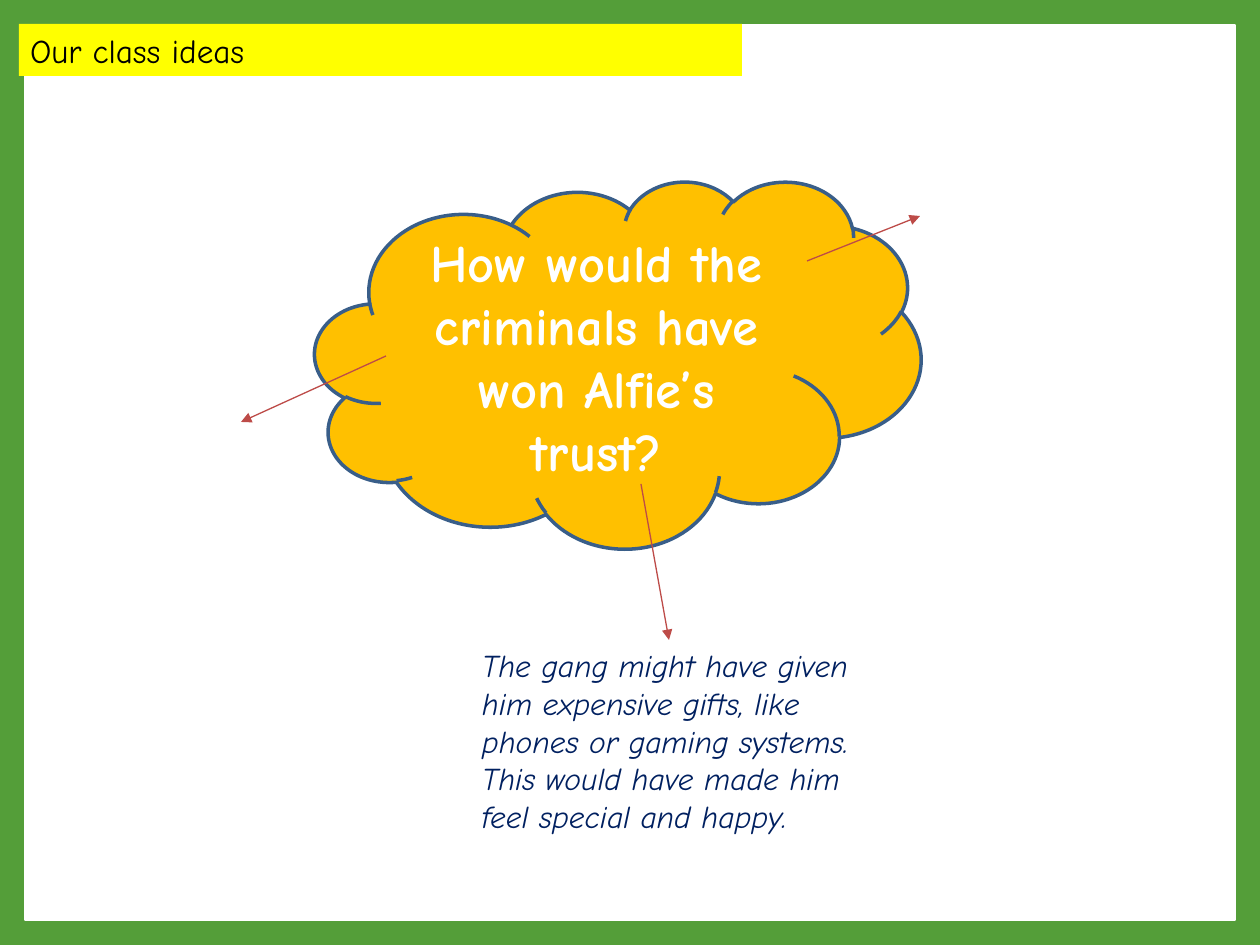
from pptx import Presentation, util as u
from pptx.dml.color import RGBColor
from pptx.enum import shapes, text
from pptx.oxml.ns import qn
from lxml import etree

PX = 914400 / 126
FONT = "Comic Neue"


def px(n):
    """Turn pixels into EMU."""
    return u.Emu(round(n * PX))


def rgb(h):
    """Turn a hex string into a colour."""
    return RGBColor.from_string(h)


def write(sp, words, color, align=text.PP_ALIGN.LEFT, anchor=text.MSO_ANCHOR.TOP, **fmt):
    """Put one formatted paragraph in a shape."""
    tf = sp.text_frame
    frame = dict(word_wrap=True, vertical_anchor=anchor, margin_left=px(11),
                 margin_right=px(11), margin_top=px(6), margin_bottom=px(6))
    for key, value in frame.items():
        setattr(tf, key, value)
    p = tf.paragraphs[0]
    p.alignment = align
    r = p.add_run()
    r.text = words
    for key, value in dict(name=FONT, **fmt).items():
        setattr(r.font, key, value)
    r.font.color.rgb = rgb(color)


def block(s, kind, box, fill, line=None, width=1):
    """Draw a filled preset shape in a box."""
    sp = s.shapes.add_shape(kind, *map(px, box))
    sp.shadow.inherit = False
    sp.fill.solid()
    sp.fill.fore_color.rgb = rgb(fill)
    if line:
        sp.line.color.rgb = rgb(line)
        sp.line.width = u.Pt(width)
    else:
        sp.line.fill.background()
    return sp


def arrow(s, x, y, start, end):
    """Draw a thin arrow between two points measured from x, y."""
    points = x + start[0], y + start[1], x + end[0], y + end[1]
    c = s.shapes.add_connector(shapes.MSO_CONNECTOR.STRAIGHT, *map(px, points))
    c.line.color.rgb = rgb("BD4B48")
    c.line.width = u.Pt(0.75)
    etree.SubElement(c.line._get_or_add_ln(), qn("a:tailEnd"), type="triangle")
    etree.SubElement(c._element.spPr, qn("a:effectLst"))


def page(s, box):
    """Draw the white page inside a green border."""
    s.background.fill.solid()
    s.background.fill.fore_color.rgb = rgb("549E39")
    block(s, shapes.MSO_SHAPE.RECTANGLE, box, "FFFFFF", "FFFFFF")


def heading(s, box, words):
    """Draw the yellow heading bar."""
    sp = block(s, shapes.MSO_SHAPE.RECTANGLE, box, "FFFF00")
    write(sp, words, "000000", size=u.Pt(19))


def mind_map(s, box, question):
    """Draw the question cloud and the arrows leading out of it."""
    x, y, w, h = box
    sp = block(s, shapes.MSO_SHAPE.CLOUD, box, "FFC000", "395E89", 2)
    write(sp, question, "FFFFFF", text.PP_ALIGN.CENTER, text.MSO_ANCHOR.MIDDLE,
          size=u.Pt(30), bold=True)
    for start, end in [((492, 80), (605, 35)),
                       ((326, 303), (354, 459)),
                       ((71, 175), (-74, 241))]:
        arrow(s, x, y, start, end)


def idea(s, box, words):
    """Write one idea in italics."""
    sp = s.shapes.add_textbox(*map(px, box))
    write(sp, words, "002060", size=u.Pt(18), italic=True)


def main():
    """Build the slide and save it."""
    prs = Presentation()
    prs.slide_width, prs.slide_height = px(1260), px(945)
    s = prs.slides.add_slide(prs.slide_layouts[6])
    page(s, (25, 25, 1210, 895))
    heading(s, (19, 24, 723, 52), "Our class ideas")
    mind_map(s, (315, 181, 606, 367), "How would the criminals have won Alfie’s trust?")
    idea(s, (471, 640, 415, 203),
         "The gang might have given him expensive gifts, like phones or gaming "
         "systems. This would have made him feel special and happy.")
    prs.save("out.pptx")


if __name__ == "__main__":
    main()
